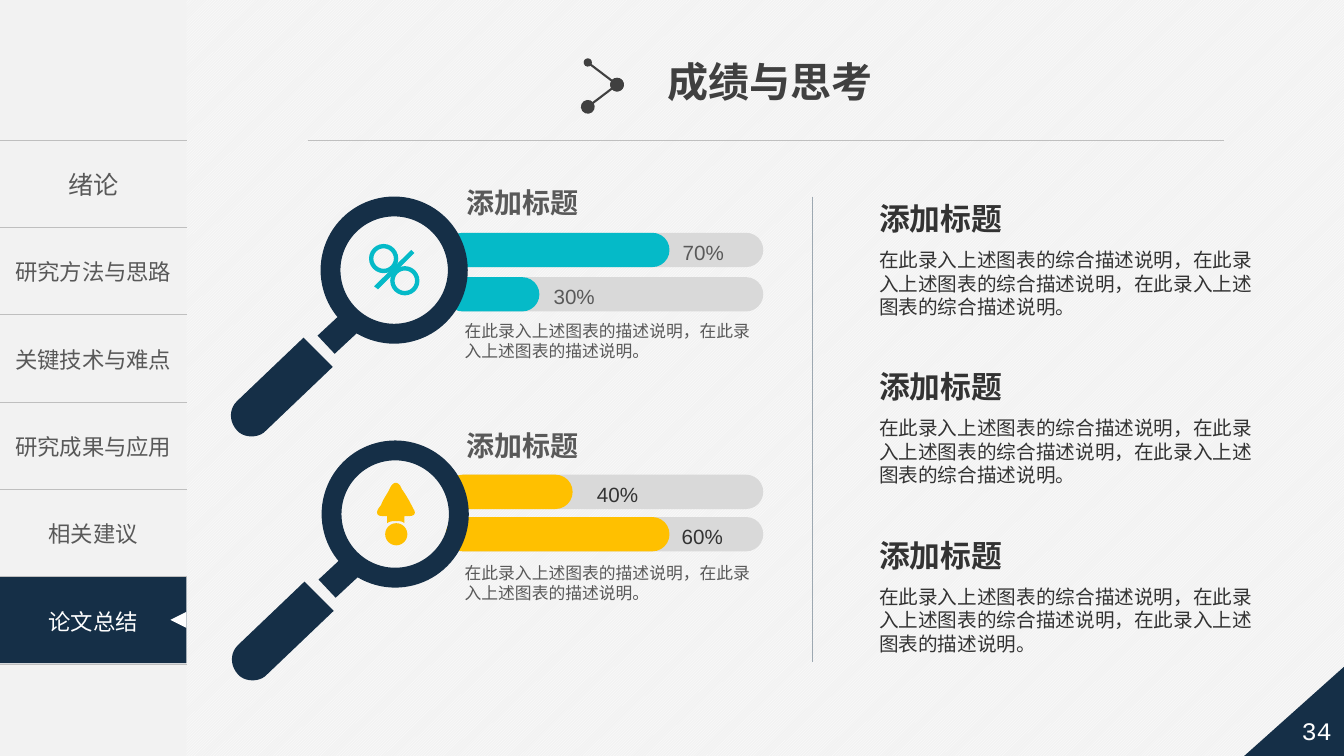
from lxml.etree import SubElement
from pptx import Presentation
from pptx.dml.color import RGBColor
from pptx.enum.dml import MSO_PATTERN
from pptx.enum.shapes import MSO_CONNECTOR, MSO_SHAPE
from pptx.enum.text import MSO_ANCHOR, MSO_AUTO_SIZE, PP_ALIGN
from pptx.oxml.ns import qn
from pptx.util import Inches, Pt

COLORS = {
    "paper": "F2F2F2", "white": "FFFFFF", "navy": "152F47", "rule": "BFBFBF",
    "divider": "9DA8B1", "track": "D9D9D9", "teal": "05BAC8", "amber": "FFC000",
    "title": "404040", "text": "333333", "muted": "595959",
}
CJK = "Noto Sans CJK SC"


def color(name):
    return RGBColor.from_string(COLORS[name])


def bezier(start, curve, steps=10):
    """Points along a cubic curve given as x1, y1, x2, y2, x3, y3."""
    knots = [start, curve[0:2], curve[2:4], curve[4:6]]
    for step in range(1, steps + 1):
        t = step / steps
        weights = ((1 - t) ** 3, 3 * t * (1 - t) ** 2, 3 * t * t * (1 - t), t ** 3)
        yield tuple(sum(w * knot[axis] for w, knot in zip(weights, knots)) for axis in (0, 1))


class SlideBuilder:
    def __init__(self):
        self.deck = Presentation()
        self.deck.slide_width, self.deck.slide_height = Inches(13.33), Inches(7.5)
        self.page = self.deck.slides.add_slide(self.deck.slide_layouts[5])
        self.shapes = self.page.shapes
        fill = self.page.background.fill
        fill.patterned()
        fill.pattern = MSO_PATTERN.LIGHT_UPWARD_DIAGONAL
        fill.fore_color.rgb, fill.back_color.rgb = color("white"), color("paper")

    def group(self):
        self.shapes = self.page.shapes.add_group_shape().shapes

    def ungroup(self):
        self.shapes = self.page.shapes

    def paint(self, shape, fill):
        shape.shadow.inherit = False
        shape.line.fill.background()
        if fill:
            shape.fill.solid()
            shape.fill.fore_color.rgb = color(fill)
        else:
            shape.fill.background()
        return shape

    def shape(self, kind, left, top, width, height, fill=None, adjust=None, flip=False):
        shape = self.shapes.add_shape(kind, *map(Inches, (left, top, width, height)))
        if adjust is not None:
            shape.adjustments[0] = adjust
        if flip:
            shape._element.spPr.xfrm.set("flipH", "1")
        return self.paint(shape, fill)

    def outline(self, start, segments, fill, dx=0, dy=0):
        """Closed outline; a segment of two numbers is a line, of six a curve."""
        points = [start]
        for segment in segments:
            points += [segment] if len(segment) == 2 else bezier(points[-1], segment)
        placed = [(Inches(x + dx), Inches(y + dy)) for x, y in points]
        builder = self.shapes.build_freeform(*placed[0])
        builder.add_line_segments(placed[1:], close=True)
        return self.paint(builder.convert_to_shape(), fill)

    def line(self, begin, end, stroke, weight, ends=None):
        line = self.shapes.add_connector(
            MSO_CONNECTOR.STRAIGHT, *map(Inches, (*begin, *end)))
        line.line.color.rgb, line.line.width = color(stroke), Pt(weight)
        properties = line._element.spPr
        for tag, size in zip(("a:headEnd", "a:tailEnd"), ends or ()):
            SubElement(properties.get_or_add_ln(), qn(tag), type="oval", w=size, len=size)
        SubElement(properties, qn("a:effectLst"))

    def fill_text(self, frame, text, size, ink, font=CJK, bold=False,
                  align=PP_ALIGN.LEFT, spacing=None):
        para = frame.paragraphs[0]
        para.alignment, para.line_spacing = align, spacing
        span = para.add_run()
        span.text = text
        for name, value in {"name": font, "size": Pt(size), "bold": bold}.items():
            setattr(span.font, name, value)
        span.font.color.rgb = color(ink)
        SubElement(span._r.get_or_add_rPr(), qn("a:ea"), typeface=CJK)

    def text(self, left, top, width, height, text, size, ink, wrap=True, inset=0.05, **style):
        box = self.shapes.add_textbox(*map(Inches, (left, top, width, height)))
        frame = box.text_frame
        settings = {"word_wrap": wrap, "margin_top": Inches(inset),
                    "auto_size": MSO_AUTO_SIZE.SHAPE_TO_FIT_TEXT}
        for name, value in settings.items():
            setattr(frame, name, value)
        self.fill_text(frame, text, size, ink, **style)

    def heading(self, left, top, width, height, size, ink):
        self.text(left, top, width, height, "添加标题", size, ink, wrap=False, inset=0, bold=True)

    def title(self, left, top, width, height, text):
        title = self.page.shapes.title
        places = {"left": left, "top": top, "width": width, "height": height}
        for name, value in places.items():
            setattr(title, name, Inches(value))
        settings = {"word_wrap": False, "margin_top": 0, "vertical_anchor": MSO_ANCHOR.TOP,
                    "auto_size": MSO_AUTO_SIZE.NONE}
        for name, value in settings.items():
            setattr(title.text_frame, name, value)
        self.fill_text(title.text_frame, text, 29.3, "title", font="Arial", bold=True)

    def menu(self, left, top, width, height, items):
        frame = self.shapes.add_table(len(items), 1, *map(Inches, (left, top, width, height)))
        table = frame.table
        table.first_row = table.horz_banding = False
        for index, item in enumerate(items):
            cell = table.cell(index, 0)
            cell.vertical_anchor = MSO_ANCHOR.MIDDLE
            ink = "white" if index == len(items) - 1 else "muted"
            size = 18 if index == 0 else 16
            self.fill_text(cell.text_frame, item, size, ink, align=PP_ALIGN.CENTER)
            properties = cell._tc.get_or_add_tcPr()
            for tag in ("a:lnL", "a:lnR", "a:lnT", "a:lnB"):
                if tag in ("a:lnL", "a:lnR"):
                    SubElement(SubElement(properties, qn(tag), w="0"), qn("a:noFill"))
                else:
                    paint = SubElement(SubElement(properties, qn(tag), w="12700"), qn("a:solidFill"))
                    SubElement(paint, qn("a:srgbClr"), val=COLORS["rule"])
            cell.fill.background()

    def bar(self, top, length, fill, label, label_left, ink, label_width=0.71):
        self.group()
        for width, shade in ((3.15, "track"), (length, fill)):
            self.shape(MSO_SHAPE.ROUNDED_RECTANGLE, 4.42, top, width, 0.34, shade, 0.5)
        self.text(label_left, top - 0.03, label_width, 0.37, label, 14.7, ink,
                  font="Arial", align=PP_ALIGN.CENTER, spacing=1.2)
        self.ungroup()

    def magnifier(self, dx, dy):
        self.outline((3.61, 3.24), [(3.32, 3.51), (3.15, 3.33), (3.44, 3.06)], "navy", dx, dy)
        self.shape(MSO_SHAPE.DONUT, 3.18 + dx, 1.95 + dy, 1.46, 1.46, "navy", 0.135)
        self.outline((3.01, 3.35), [
            (2.35, 3.98), (2.27, 4.06, 2.27, 4.18, 2.35, 4.27),
            (2.42, 4.35, 2.57, 4.35, 2.64, 4.27), (3.3, 3.64)], "navy", dx, dy)


def main():
    slide = SlideBuilder()

    # Side menu with the current chapter marked
    slide.shape(MSO_SHAPE.RECTANGLE, 0, 0, 1.85, 7.5, "paper")
    slide.shape(MSO_SHAPE.RECTANGLE, 0, 5.72, 1.85, 0.86, "navy")
    slide.menu(0, 1.39, 1.85, 5.2, [
        "绪论", "研究方法与思路", "关键技术与难点", "研究成果与应用", "相关建议", "论文总结"])
    slide.shape(MSO_SHAPE.ISOSCELES_TRIANGLE, 1.69, 6.07, 0.16, 0.16, "white").rotation = 270

    # Title with its node mark, rules and page number
    slide.title(6.52, 0.56, 2.26, 0.59, "成绩与思考")
    slide.group()
    slide.line((5.83, 0.62), (6.12, 0.84), "title", 1.5, ("med", "lg"))
    slide.line((6.12, 0.84), (5.83, 1.06), "title", 1.5, ("lg", "lg"))
    slide.ungroup()
    slide.line((3.05, 1.39), (12.14, 1.39), "rule", 0.5)
    slide.line((8.06, 1.95), (8.06, 6.57), "divider", 1)
    slide.shape(MSO_SHAPE.RIGHT_TRIANGLE, 12.33, 6.58, 1.04, 0.93, "navy", flip=True)
    number = slide.shape(MSO_SHAPE.PENTAGON, 12.45, 6.97, 1.08, 0.55, flip=True)
    number.text_frame.vertical_anchor = MSO_ANCHOR.MIDDLE
    slide.fill_text(number.text_frame, "34", 18, "white", font="Courier New", align=PP_ALIGN.CENTER)

    # Percentage bars
    slide.bar(2.31, 2.22, "teal", "70%", 6.62, "muted")
    slide.bar(2.75, 0.93, "teal", "30%", 5.34, "muted")
    slide.bar(4.71, 1.26, "amber", "40%", 5.65, "text", 0.95)
    slide.bar(5.13, 2.22, "amber", "60%", 6.61, "text")

    # Magnifier with a percent sign
    slide.group()
    slide.magnifier(0, 0)
    for left, top in ((3.66, 2.42), (3.87, 2.64)):
        slide.shape(MSO_SHAPE.DONUT, left, top, 0.29, 0.29, "teal", 0.15)
    slide.outline((4.11, 2.51), [(3.75, 2.87), (3.71, 2.84), (4.08, 2.48)], "teal")

    # Magnifier with an arrow over a ball
    slide.group()
    slide.outline((4.08, 5.01), [
        (4.06, 4.97, 4.02, 4.9, 3.99, 4.86), (3.97, 4.82), (3.94, 4.78, 3.91, 4.78, 3.88, 4.82),
        (3.86, 4.86), (3.84, 4.9, 3.79, 4.97, 3.78, 5.01), (3.75, 5.05),
        (3.73, 5.09, 3.74, 5.12, 3.79, 5.12), (3.84, 5.12), (3.84, 5.19),
        (3.87, 5.17, 3.89, 5.17, 3.93, 5.17), (3.96, 5.17, 3.99, 5.17, 4.01, 5.19),
        (4.01, 5.12), (4.06, 5.12), (4.11, 5.12, 4.13, 5.09, 4.1, 5.05)], "amber")
    slide.shape(MSO_SHAPE.OVAL, 3.82, 5.19, 0.22, 0.22, "amber")
    slide.magnifier(0.01, 2.42)
    slide.ungroup()

    # Headings and captions of the bars
    for heading_top, caption_top in ((1.84, 3.13), (4.25, 5.53)):
        slide.heading(4.53, heading_top, 1.32, 0.44, 20, "muted")
        slide.text(4.51, caption_top, 3.08, 0.59,
                   "在此录入上述图表的描述说明，在此录入上述图表的描述说明。", 12, "muted")

    # Summary column
    summary = "在此录入上述图表的综合描述说明，"
    for index, ending in enumerate(("综合描述说明", "综合描述说明", "描述说明")):
        top = 1.98 + 1.67 * index
        slide.heading(8.62, top, 1.44, 0.47, 22, "text")
        slide.text(8.62, top + 0.43, 3.96, 0.95,
                   f"{summary * 2}在此录入上述图表的{ending}。", 14, "text")

    slide.deck.save("out.pptx")


if __name__ == "__main__":
    main()
